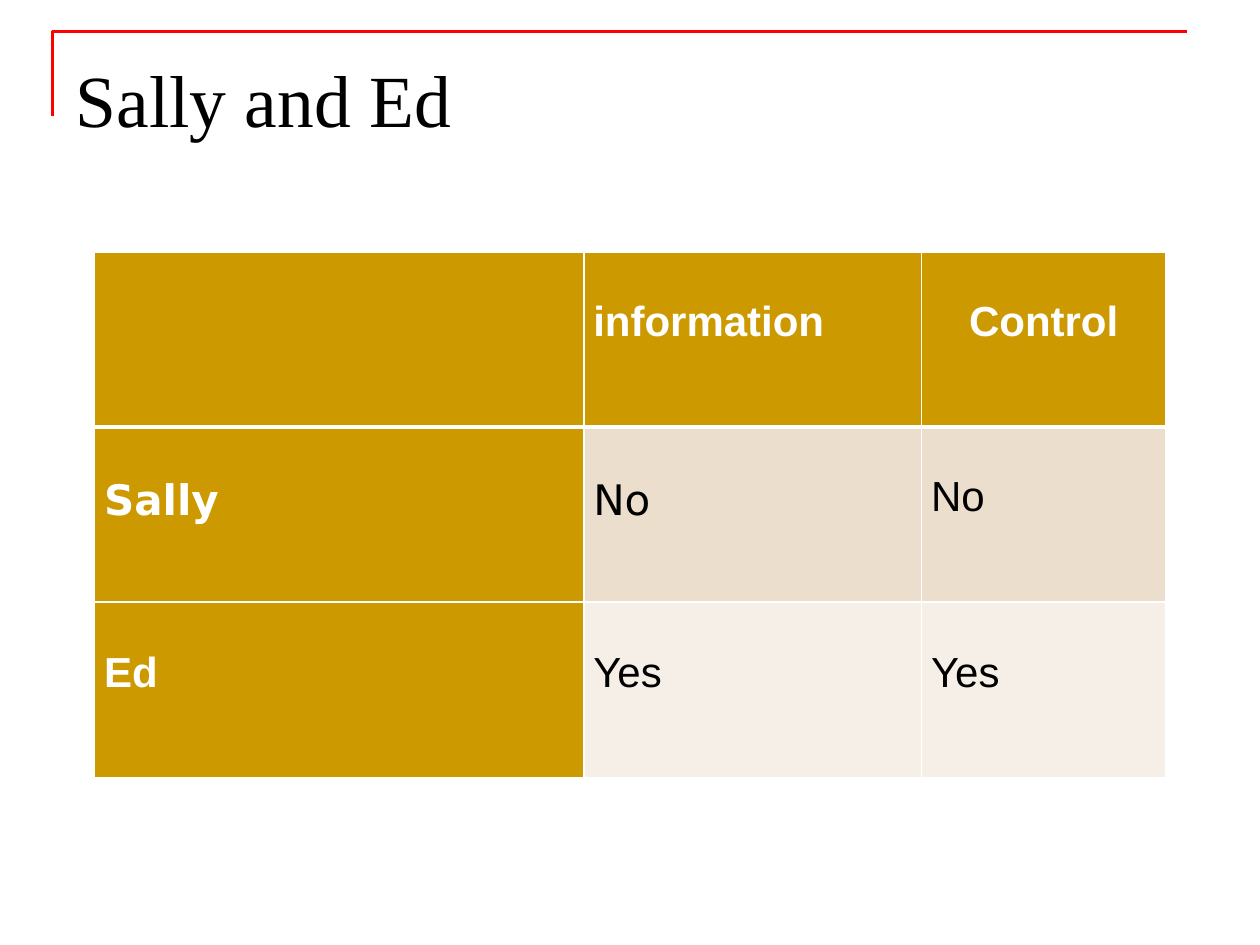
from dataclasses import dataclass

from lxml.etree import SubElement
from pptx import Presentation
from pptx.dml.color import RGBColor
from pptx.enum.text import MSO_ANCHOR, PP_ALIGN
from pptx.oxml.ns import qn
from pptx.util import Cm, Pt

# Content: (text, format overrides) for each cell
TITLE = "Sally and Ed"
ANSWERS = [
    [("", {}), ("information", {}), ("Control", {"align": PP_ALIGN.CENTER})],
    [("Sally", {"font": "DejaVu Sans"}), ("No", {"font": "DejaVu Sans"}), ("No", {})],
    [("Ed", {}), ("Yes", {}), ("Yes", {})],
]
COLUMN_WIDTHS = [9.86, 6.81, 4.92]
ROW_HEIGHT = 3.53


@dataclass(frozen=True)
class Theme:
    title_font: str = "Times New Roman"
    body_font: str = "Arial"
    title_size: int = 42
    body_size: int = 24
    ink: str = "000000"
    paper: str = "FFFFFF"
    accent: str = "FF0000"
    header: str = "CC9900"
    bands: tuple = ("ECDECC", "F6EFE7")


THEME = Theme()


def write(frame, text, *, font=THEME.body_font, size=THEME.body_size,
          color=THEME.ink, bold=False, align=PP_ALIGN.LEFT, spacing=1.0):
    paragraph = frame.paragraphs[0]
    paragraph.alignment = align
    paragraph.line_spacing = spacing
    run = paragraph.add_run()
    run.text = text
    run.font.name = font
    run.font.size = Pt(size)
    run.font.bold = bold
    run.font.color.rgb = RGBColor.from_string(color)


def set_borders(cell, widths):
    properties = cell._tc.get_or_add_tcPr()
    for position, (side, width) in enumerate(widths.items()):
        border = properties.makeelement(qn(f"a:{side}"), {"w": str(Pt(width))})
        fill = SubElement(border, qn("a:solidFill"))
        SubElement(fill, qn("a:srgbClr"), val=THEME.paper)
        properties.insert(position, border)


def add_corner_rule(slide):
    left, top, right, bottom = Cm(1.06), Cm(0.63), Cm(23.92), Cm(2.33)
    builder = slide.shapes.build_freeform(left, bottom)
    builder.add_line_segments([(left, top), (right, top)], close=False)
    corner = builder.convert_to_shape()
    corner.shadow.inherit = False
    corner.fill.background()
    corner.line.color.rgb = RGBColor.from_string(THEME.accent)
    corner.line.width = Pt(1.5)


def add_title(slide):
    title = slide.shapes.title
    title.left, title.top, title.width, title.height = Cm(1.27), Cm(0.76), Cm(22.86), Cm(3.18)
    frame = title.text_frame
    frame.vertical_anchor = MSO_ANCHOR.TOP
    frame.margin_top = Cm(0.33)
    write(frame, TITLE, font=THEME.title_font, size=THEME.title_size)


def add_answers(slide):
    table = slide.shapes.add_table(
        len(ANSWERS), len(COLUMN_WIDTHS), Cm(1.91), Cm(5.08),
        Cm(sum(COLUMN_WIDTHS)), Cm(ROW_HEIGHT * len(ANSWERS))).table
    table.first_col = True
    for column, width in zip(table.columns, COLUMN_WIDTHS):
        column.width = Cm(width)

    for r, answers in enumerate(ANSWERS):
        table.rows[r].height = Cm(ROW_HEIGHT)
        for c, (text, style) in enumerate(answers):
            cell = table.cell(r, c)
            heading = r == 0 or c == 0
            cell.fill.solid()
            cell.fill.fore_color.rgb = RGBColor.from_string(
                THEME.header if heading else THEME.bands[r - 1])
            cell.margin_left = cell.margin_right = Cm(0.19)
            cell.margin_top = cell.margin_bottom = Cm(0)
            # The header row is closed by a heavier rule
            set_borders(cell, {"lnL": 1, "lnR": 1,
                               "lnT": 3 if r == 1 else 1,
                               "lnB": 3 if r == 0 else 1})
            if text:
                write(cell.text_frame, text, bold=heading, spacing=2.0,
                      color=THEME.paper if heading else THEME.ink, **style)


def main():
    deck = Presentation()
    deck.slide_width, deck.slide_height = Cm(25.4), Cm(19.05)
    slide = deck.slides.add_slide(deck.slide_layouts.get_by_name("Title Only"))
    add_corner_rule(slide)
    add_title(slide)
    add_answers(slide)
    deck.save("out.pptx")


if __name__ == "__main__":
    main()
